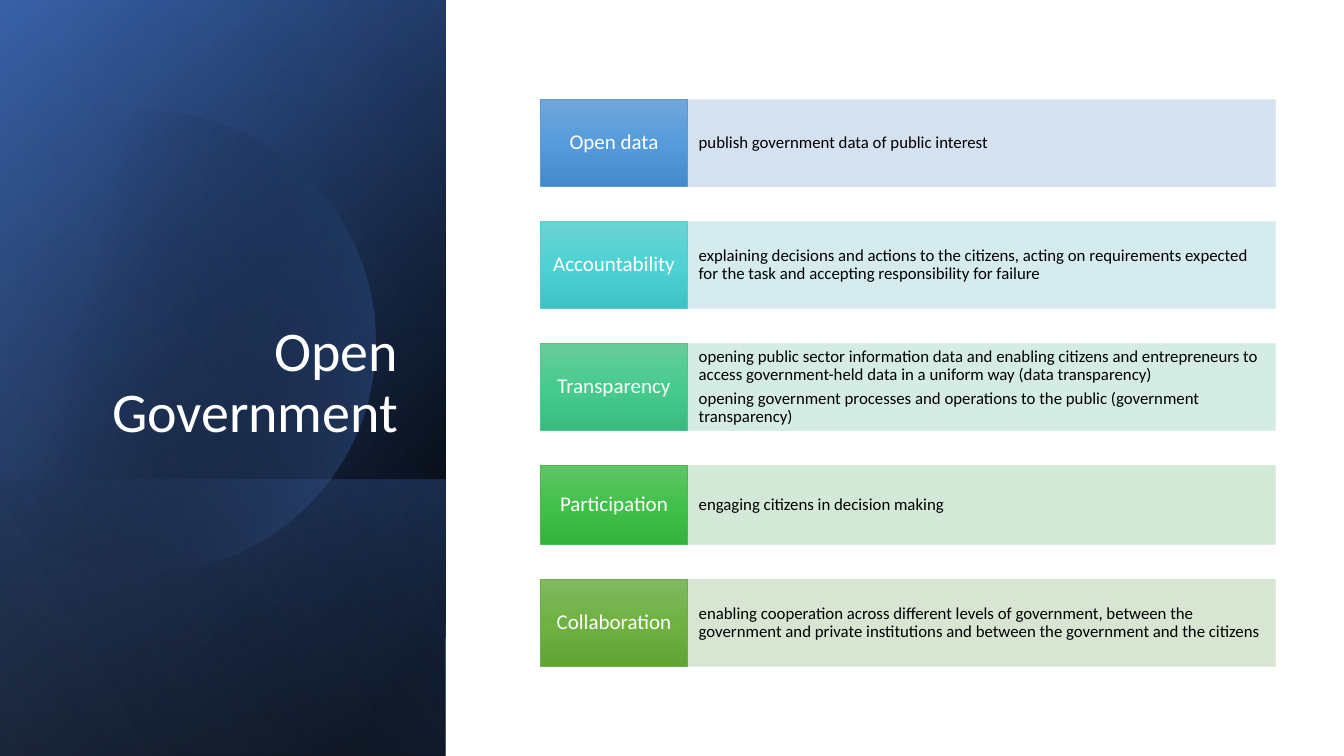
import dataclasses
import math

import pptx
import pptx.dml.color
import pptx.enum.shapes
import pptx.enum.text
import pptx.oxml
import pptx.oxml.ns
import pptx.shapes.autoshape
import pptx.slide
import pptx.text.text
import pptx.util
from pptx.dml.color import RGBColor
from pptx.util import Inches

FONT = "Calibri"
BLACK = RGBColor(0x00, 0x00, 0x00)
WHITE = RGBColor(0xFF, 0xFF, 0xFF)
NAVY = RGBColor(0x2F, 0x55, 0x97)
BLUE = RGBColor(0x44, 0x72, 0xC4)
PALE_BLUE = RGBColor(0x8F, 0xAA, 0xDC)
SKY = tuple(map(RGBColor.from_string, ("71A6DB", "559BDB", "448ACA", "5B9BD5", "D2DEEF")))
TEAL = tuple(map(RGBColor.from_string, ("6CD3D3", "4ED2D3", "3EC2C3", "54CCCD", "D1E9ED")))
MINT = tuple(map(RGBColor.from_string, ("67CC9A", "47CB8E", "39BB7F", "4DC58D", "D0EAE1")))
GREEN = tuple(map(RGBColor.from_string, ("63C368", "42C14A", "34B23D", "48BB4F", "D0E6D4")))
OLIVE = tuple(map(RGBColor.from_string, ("81B861", "6FB242", "62A336", "70AD47", "D5E3CF")))

PANEL_WIDTH = 4.42
LABEL_LEFT, LABEL_WIDTH = 5.36, 1.46
DETAIL_LEFT, DETAIL_WIDTH = 6.82, 5.83
FIRST_ROW_TOP, ROW_GAP = 0.99, 0.35


@dataclasses.dataclass(frozen=True)
class Stop:
    position: int
    colour: RGBColor
    opacity: int = 100


@dataclasses.dataclass(frozen=True)
class Panel:
    top: float
    height: float
    angle: int
    stops: tuple[Stop, ...]


@dataclasses.dataclass(frozen=True)
class Principle:
    """Palette order: top, middle, bottom, outline, detail."""
    name: str
    details: tuple[str, ...]
    palette: tuple[RGBColor, ...]
    height: float = 0.86


BASE_PANELS = (
    Panel(0, 7.5, 50, (Stop(8, BLACK), Stop(100, NAVY))),
    Panel(0, 7.5, 30, (Stop(0, BLACK, 0), Stop(99, BLUE, 46))),
    Panel(4.76, 2.74, 130, (Stop(2, BLUE, 29), Stop(100, BLACK, 30))),
)
GLOW_PANEL = Panel(0, 7.5, 120, (Stop(0, BLACK, 0), Stop(99, PALE_BLUE, 11)))

PRINCIPLES = (
    Principle("Open data", ("publish government data of public interest",), SKY),
    Principle("Accountability", (
        "explaining decisions and actions to the citizens, acting on requirements "
        "expected for the task and accepting responsibility for failure",), TEAL),
    Principle("Transparency", (
        "opening public sector information data and enabling citizens and entrepreneurs "
        "to access government-held data in a uniform way (data transparency)",
        "opening government processes and operations to the public "
        "(government transparency)"), MINT),
    Principle("Participation", ("engaging citizens in decision making",), GREEN, 0.78),
    Principle("Collaboration", (
        "enabling cooperation across different levels of government, between the "
        "government and private institutions and between the government and the citizens",
    ), OLIVE),
)


def fill_gradient(shape: pptx.shapes.autoshape.Shape, angle: int,
                  stops: tuple[Stop, ...]) -> None:
    shape.fill.gradient()
    stop_xml = "".join(
        f'<a:gs pos="{stop.position * 1000}"><a:srgbClr val="{stop.colour}">'
        f'<a:alpha val="{stop.opacity * 1000}"/></a:srgbClr></a:gs>'
        for stop in stops)
    gradient = pptx.oxml.parse_xml(
        f'<a:gradFill {pptx.oxml.ns.nsdecls("a")} rotWithShape="1">'
        f'<a:gsLst>{stop_xml}</a:gsLst><a:lin ang="{angle * 60000}" scaled="0"/>'
        '</a:gradFill>')
    previous = shape.element.spPr.find(pptx.oxml.ns.qn("a:gradFill"))
    shape.element.spPr.replace(previous, gradient)


def set_opacity(shape: pptx.shapes.autoshape.Shape, percent: int) -> None:
    """Apply one opacity to the solid fill and the outline."""
    for colour in shape.element.spPr.iter(pptx.oxml.ns.qn("a:srgbClr")):
        colour.append(pptx.oxml.parse_xml(
            f'<a:alpha {pptx.oxml.ns.nsdecls("a")} val="{percent * 1000}"/>'))


def add_rectangle(page: pptx.slide.Slide, left: float, top: float, width: float,
                  height: float) -> pptx.shapes.autoshape.Shape:
    box = page.shapes.add_shape(
        pptx.enum.shapes.MSO_SHAPE.RECTANGLE,
        Inches(left), Inches(top), Inches(width), Inches(height))
    box.shadow.inherit = False
    return box


def add_panel(page: pptx.slide.Slide, panel: Panel) -> None:
    """Draw a left-hand panel as a mirrored rectangle turned by 90 degrees."""
    box = add_rectangle(page, (PANEL_WIDTH - panel.height) / 2,
                        panel.top + (panel.height - PANEL_WIDTH) / 2,
                        panel.height, PANEL_WIDTH)
    box.rotation = 90
    box.element.spPr.xfrm.set("flipH", "1")
    box.line.fill.background()
    fill_gradient(box, panel.angle, panel.stops)


def add_disc(page: pptx.slide.Slide) -> None:
    """Draw the large circle, cut straight just beyond the slide's left edge."""
    centre_x, centre_y, radius, cut = 1.43, 3.39, 2.29, -0.15
    angles = [math.radians(degree) for degree in range(0, 360, 3)]
    points = [(Inches(max(cut, centre_x + radius * math.cos(angle))),
               Inches(centre_y + radius * math.sin(angle))) for angle in angles]
    outline = page.shapes.build_freeform(*points[0])
    outline.add_line_segments(points[1:], close=True)
    disc = outline.convert_to_shape()
    disc.shadow.inherit = False
    disc.line.fill.background()
    fill_gradient(disc, 14, (Stop(29, BLACK, 0), Stop(100, BLUE, 43)))


def add_span(para: pptx.text.text._Paragraph, text: str, size: int,
             colour: RGBColor) -> None:
    para.line_spacing = 0.9
    span = para.add_run()
    span.text = text
    span.font.name = FONT
    span.font.size = pptx.util.Pt(size)
    span.font.color.rgb = colour


def write_lines(box: pptx.shapes.autoshape.Shape, lines: tuple[str, ...], size: int,
                colour: RGBColor, alignment: pptx.enum.text.PP_ALIGN,
                inset: float) -> None:
    frame = box.text_frame
    frame.word_wrap = True
    frame.vertical_anchor = pptx.enum.text.MSO_ANCHOR.MIDDLE
    frame.margin_left = frame.margin_right = Inches(inset)
    frame.margin_top = frame.margin_bottom = 0
    for index, line in enumerate(lines):
        para = frame.add_paragraph() if index else frame.paragraphs[0]
        para.alignment = alignment
        if index:
            para.space_before = pptx.util.Pt(4.2)
        add_span(para, line, size, colour)


def add_principle(page: pptx.slide.Slide, principle: Principle, top: float) -> None:
    light, middle, dark, outline, tint = principle.palette
    detail = add_rectangle(page, DETAIL_LEFT, top, DETAIL_WIDTH, principle.height)
    detail.fill.solid()
    detail.fill.fore_color.rgb = tint
    detail.line.color.rgb = tint
    detail.line.width = pptx.util.Pt(0.5)
    set_opacity(detail, 90)
    write_lines(detail, principle.details, 12, BLACK, pptx.enum.text.PP_ALIGN.LEFT, 0.11)

    label = add_rectangle(page, LABEL_LEFT, top, LABEL_WIDTH, principle.height)
    fill_gradient(label, 90, (Stop(0, light), Stop(50, middle), Stop(100, dark)))
    label.line.color.rgb = outline
    label.line.width = pptx.util.Pt(0.5)
    write_lines(label, (principle.name,), 15, WHITE, pptx.enum.text.PP_ALIGN.CENTER, 0.08)


def place_title(page: pptx.slide.Slide) -> None:
    title = page.shapes.title
    title.left, title.top = Inches(0.64), Inches(1.84)
    title.width, title.height = Inches(3.41), Inches(2.62)
    title.text_frame.word_wrap = True
    title.text_frame.auto_size = pptx.enum.text.MSO_AUTO_SIZE.NONE
    title.text_frame.vertical_anchor = pptx.enum.text.MSO_ANCHOR.BOTTOM
    para = title.text_frame.paragraphs[0]
    para.alignment = pptx.enum.text.PP_ALIGN.RIGHT
    add_span(para, "Open Government", 40, WHITE)
    title.element.getparent().append(title.element)


def main() -> None:
    deck = pptx.Presentation()
    deck.slide_width, deck.slide_height = Inches(13.33), Inches(7.5)
    page = deck.slides.add_slide(deck.slide_layouts.get_by_name("Title Only"))
    for panel in BASE_PANELS:
        add_panel(page, panel)
    add_disc(page)
    add_panel(page, GLOW_PANEL)
    place_title(page)
    top = FIRST_ROW_TOP
    for principle in PRINCIPLES:
        add_principle(page, principle, top)
        top += principle.height + ROW_GAP
    deck.save("out.pptx")


if __name__ == "__main__":
    main()
